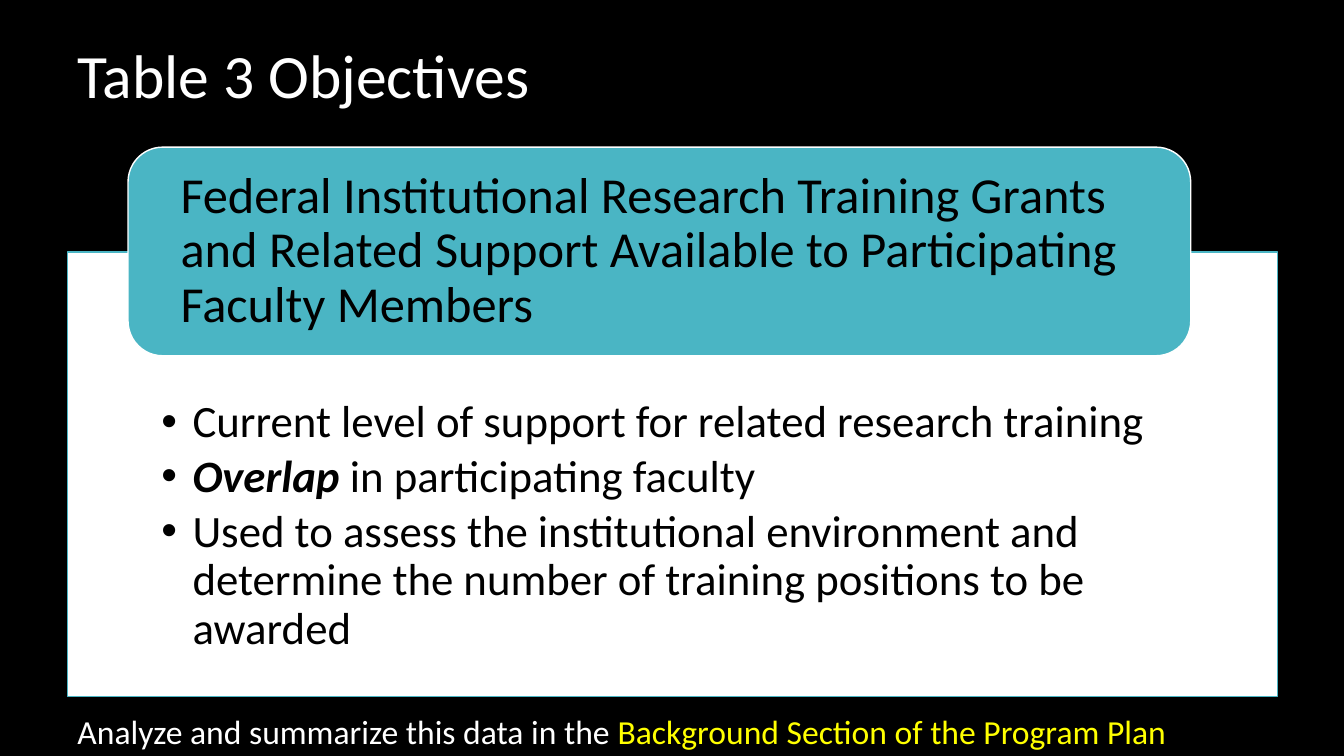
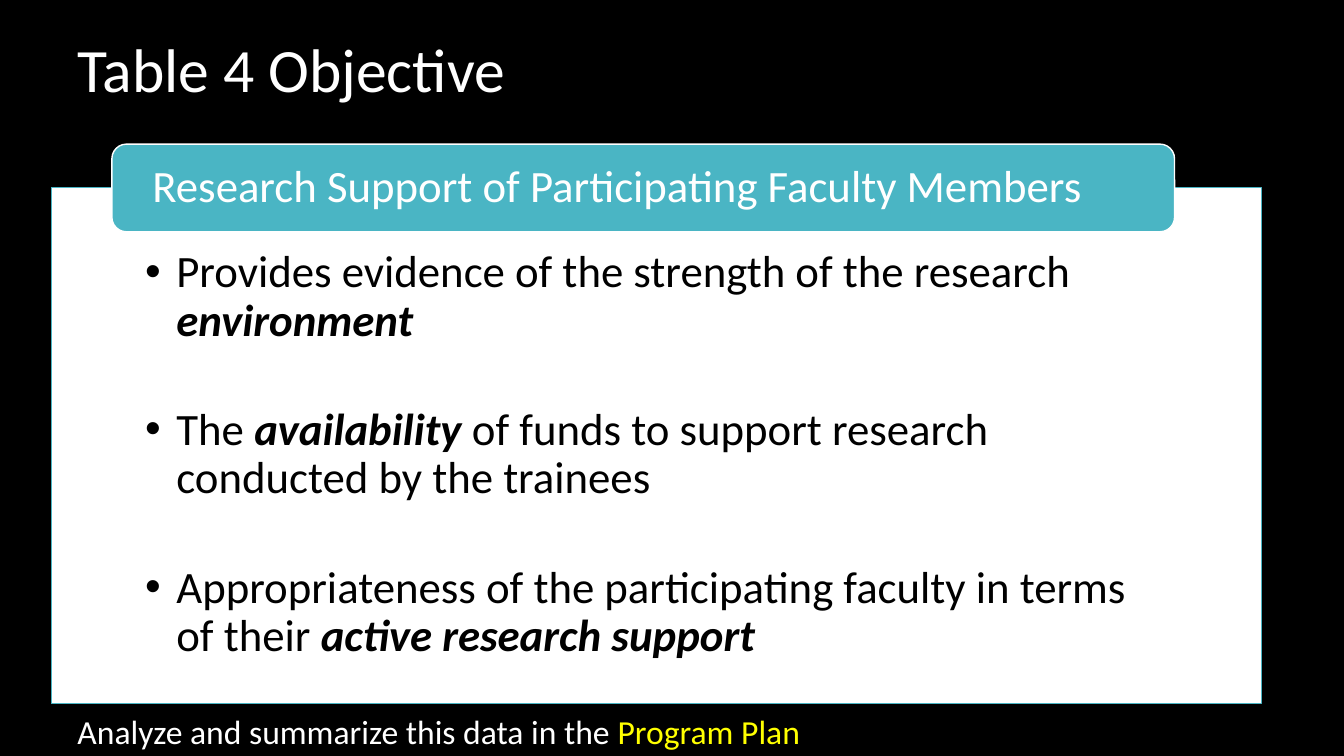
from dataclasses import dataclass

from lxml.etree import SubElement
from pptx import Presentation
from pptx.dml.color import RGBColor
from pptx.enum.shapes import MSO_SHAPE
from pptx.enum.text import MSO_ANCHOR, MSO_AUTO_SIZE, PP_ALIGN
from pptx.oxml.ns import qn
from pptx.util import Inches, Pt


@dataclass(frozen=True)
class Theme:
    """Colours and type sizes shared by the slides."""

    font: str = "Calibri"
    black: RGBColor = RGBColor(0x00, 0x00, 0x00)
    white: RGBColor = RGBColor(0xFF, 0xFF, 0xFF)
    teal: RGBColor = RGBColor(0x4A, 0xB5, 0xC4)
    yellow: RGBColor = RGBColor(0xFF, 0xFF, 0x00)
    title_size: int = 44
    body_size: int = 32
    footer_size: int = 24


THEME = Theme()
BOLD_ITALIC = {"bold": True, "italic": True}
FOOTER_START = "Analyze and summarize this data in the "

SLIDES = [
    {
        "title": "Table 3 Objectives",
        "title_top": 0.25,
        "panel": (0.67, 2.5, 12, 4.41),
        "panel_inset": 1.46,
        "bullet_gap": 4.5,
        "bullets": [
            [("Current level of support for related research training", {})],
            [("Overlap", BOLD_ITALIC), (" in participating faculty", {})],
            [("Used to assess the institutional environment and determine "
              "the number of training positions to be awarded", {})],
        ],
        "heading": "Federal Institutional Research Training Grants and Related "
                   "Support Available to Participating Faculty Members",
        "heading_top": 1.46,
        "heading_height": 2.07,
        "heading_inset": (0.42, 0.1),
        "heading_size": 36,
        "heading_color": THEME.black,
        "footer": "Background Section of the Program Plan",
        "footer_width": 11.14,
    },
    {
        "title": "Table 4 Objective",
        "title_top": 0.19,
        "panel": (0.51, 1.86, 12, 5.12),
        "panel_inset": 0.61,
        "bullet_gap": 43.5,
        "bullets": [
            [("Provides evidence of the strength of the research ", {}),
             ("environment", BOLD_ITALIC)],
            [("The ", {}), ("availability", BOLD_ITALIC),
             (" of funds to support research conducted by the trainees", {})],
            [("Appropriateness of the participating faculty in terms of their ", {}),
             ("active research support", BOLD_ITALIC)],
        ],
        "heading": "Research Support of Participating Faculty Members",
        "heading_top": 1.43,
        "heading_height": 0.87,
        "heading_inset": (0.36, 0.04),
        "heading_size": 32,
        "heading_color": THEME.white,
        "footer": "Program Plan",
        "footer_width": 9.93,
    },
]


def set_values(target, values):
    """Set each named attribute of the target."""
    for name, value in values.items():
        setattr(target, name, value)


def add_run(paragraph, text, size, color, style=None):
    """Append a run in the theme font."""
    run = paragraph.add_run()
    run.text = text
    set_values(run.font, {"name": THEME.font, "size": Pt(size), **(style or {})})
    run.font.color.rgb = color


def set_frame(frame, anchor, horizontal=0.1, top=0.05, bottom=0.05):
    """Set wrapping, anchor and insets of a text frame."""
    set_values(frame, {
        "word_wrap": True,
        "auto_size": MSO_AUTO_SIZE.NONE,
        "vertical_anchor": anchor,
        "margin_left": Inches(horizontal),
        "margin_right": Inches(horizontal),
        "margin_top": Inches(top),
        "margin_bottom": Inches(bottom),
    })


def add_box(slide, kind, box, fill, line):
    """Add a filled and outlined preset shape."""
    shape = slide.shapes.add_shape(kind, *map(Inches, box))
    shape.shadow.inherit = False
    shape.fill.solid()
    shape.fill.fore_color.rgb = fill
    shape.line.color.rgb = line
    shape.line.width = Pt(1)
    return shape


def add_bullet(paragraph):
    """Give a paragraph a round bullet with a hanging indent."""
    properties = paragraph._p.get_or_add_pPr()
    properties.set("marL", str(Inches(0.31)))
    properties.set("indent", str(-Inches(0.31)))
    SubElement(properties, qn("a:buFont")).set("typeface", "Arial")
    SubElement(properties, qn("a:buChar")).set("char", "•")


def place_title(slide, text, top):
    """Move and format the title placeholder."""
    title = slide.shapes.title
    set_values(title, {"left": Inches(0.67), "top": Inches(top),
                       "width": Inches(12), "height": Inches(1.05)})
    set_frame(title.text_frame, MSO_ANCHOR.MIDDLE)
    paragraph = title.text_frame.paragraphs[0]
    set_values(paragraph, {"alignment": PP_ALIGN.LEFT, "line_spacing": 0.9})
    add_run(paragraph, text, THEME.title_size, THEME.white)


def add_panel(slide, box, inset, bullets, gap):
    """Add the white panel with its bullets."""
    panel = add_box(slide, MSO_SHAPE.RECTANGLE, box, THEME.white, THEME.teal)
    frame = panel.text_frame
    set_frame(frame, MSO_ANCHOR.TOP, 0.93, inset, 0.25)
    for index, runs in enumerate(bullets):
        paragraph = frame.add_paragraph() if index else frame.paragraphs[0]
        set_values(paragraph, {"alignment": PP_ALIGN.LEFT, "line_spacing": 0.9,
                               "space_after": Pt(gap)})
        add_bullet(paragraph)
        for text, style in runs:
            add_run(paragraph, text, THEME.body_size, THEME.black, style)


def add_heading(slide, box, inset, text, size, color):
    """Add the rounded teal heading that overlaps the panel."""
    heading = add_box(slide, MSO_SHAPE.ROUNDED_RECTANGLE, box, THEME.teal, THEME.white)
    horizontal, vertical = inset
    set_frame(heading.text_frame, MSO_ANCHOR.MIDDLE, horizontal, vertical, vertical)
    paragraph = heading.text_frame.paragraphs[0]
    set_values(paragraph, {"alignment": PP_ALIGN.LEFT, "line_spacing": 0.9})
    add_run(paragraph, text, size, color)


def add_footer(slide, text, width):
    """Add the closing line with its highlighted ending."""
    footer = slide.shapes.add_textbox(*map(Inches, (0.67, 7, width, 0.5)))
    set_frame(footer.text_frame, MSO_ANCHOR.TOP)
    paragraph = footer.text_frame.paragraphs[0]
    add_run(paragraph, FOOTER_START, THEME.footer_size, THEME.white)
    add_run(paragraph, text, THEME.footer_size, THEME.yellow)


def add_objective_slide(presentation, content):
    """Build one slide of objectives."""
    slide = presentation.slides.add_slide(presentation.slide_layouts[5])
    place_title(slide, content["title"], content["title_top"])
    panel = content["panel"]
    add_panel(slide, panel, content["panel_inset"], content["bullets"],
              content["bullet_gap"])
    heading_box = (panel[0] + 0.6, content["heading_top"], 10.54,
                   content["heading_height"])
    add_heading(slide, heading_box, content["heading_inset"], content["heading"],
                content["heading_size"], content["heading_color"])
    add_footer(slide, content["footer"], content["footer_width"])


def main():
    """Build and save the presentation."""
    presentation = Presentation()
    set_values(presentation, {"slide_width": Inches(13.33),
                              "slide_height": Inches(7.5)})
    background = presentation.slide_master.background.fill
    background.solid()
    background.fore_color.rgb = THEME.black
    for content in SLIDES:
        add_objective_slide(presentation, content)
    presentation.save("out.pptx")


if __name__ == "__main__":
    main()
